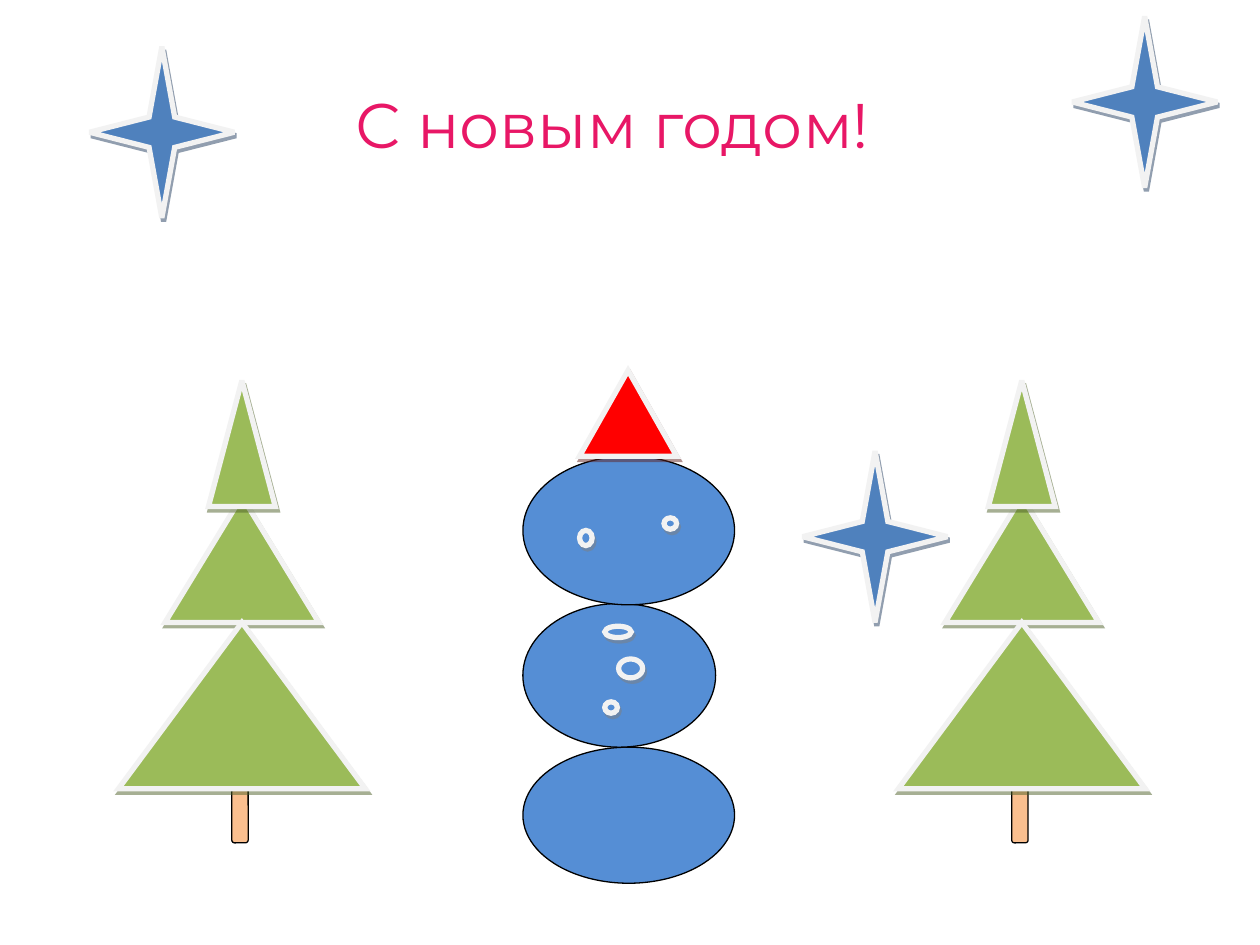
import pptx
import pptx.dml.color
import pptx.enum.shapes
import pptx.enum.text
import pptx.oxml.ns
import pptx.util
from lxml import etree

Inches = pptx.util.Inches
Pt = pptx.util.Pt
RGBColor = pptx.dml.color.RGBColor
MSO_SHAPE = pptx.enum.shapes.MSO_SHAPE
qn = pptx.oxml.ns.qn

PINK = RGBColor(0xE8, 0x17, 0x66)
BLACK = RGBColor(0x00, 0x00, 0x00)
FROST = RGBColor(0xF2, 0xF2, 0xF2)
NEEDLES = RGBColor(0x9B, 0xBB, 0x59)
NEEDLE_SHADOW = RGBColor(0x4E, 0x61, 0x28)
TRUNK = RGBColor(0xFA, 0xBF, 0x8F)
STAR = RGBColor(0x4F, 0x81, 0xBD)
STAR_SHADOW = RGBColor(0x24, 0x3F, 0x60)
SNOW = RGBColor(0x55, 0x8E, 0xD5)
BUTTON_SHADOW = RGBColor(0x7F, 0x7F, 0x7F)
HAT = RGBColor(0xFF, 0x00, 0x00)
HAT_SHADOW = RGBColor(0x62, 0x24, 0x23)


def add_figure(slide, kind, box, fill, edge=BLACK, weight=0.75):
    figure = slide.shapes.add_shape(kind, *(Inches(length) for length in box))
    figure.shadow.inherit = False
    figure.fill.solid()
    figure.fill.fore_color.rgb = fill
    figure.line.color.rgb = edge
    figure.line.width = Pt(weight)
    return figure


def add_frosted(slide, kind, box, fill, shade):
    figure = add_figure(slide, kind, box, fill, FROST, 3)
    properties = figure._element.spPr
    etree.SubElement(properties.find(qn("a:ln")), qn("a:miter"), lim="800000")
    shadow = etree.SubElement(
        properties.find(qn("a:effectLst")), qn("a:outerShdw"),
        blurRad="0", dist=str(Pt(2.2)), dir=str(63 * 60000),
        algn="ctr", rotWithShape="0")
    color = etree.SubElement(shadow, qn("a:srgbClr"), val=str(shade))
    etree.SubElement(color, qn("a:alpha"), val="50000")


def add_greeting(slide, left, top, width, height):
    title = slide.shapes.title
    title.left, title.top = Inches(left), Inches(top)
    title.width, title.height = Inches(width), Inches(height)
    frame = title.text_frame
    frame.text = "С новым годом!"
    frame.word_wrap = False
    frame.auto_size = pptx.enum.text.MSO_AUTO_SIZE.NONE
    frame.vertical_anchor = pptx.enum.text.MSO_ANCHOR.TOP
    greeting = frame.paragraphs[0]
    greeting.alignment = pptx.enum.text.PP_ALIGN.CENTER
    font = greeting.runs[0].font
    font.name = "Montserrat"
    font.size = Pt(36)
    font.color.rgb = PINK


def add_fir(slide, left, top, width):
    center = left + width / 2
    add_figure(slide, MSO_SHAPE.ROUNDED_RECTANGLE,
               (center - 0.08, top + 3.24, 0.13, 0.43), TRUNK)
    tiers = [(0.92, 1.22, 1), (0, 0.53, 1), (1.92, width, 1.32)]
    for offset, tier_width, tier_height in tiers:
        add_frosted(slide, MSO_SHAPE.ISOSCELES_TRIANGLE,
                    (center - tier_width / 2, top + offset, tier_width, tier_height),
                    NEEDLES, NEEDLE_SHADOW)


def add_star(slide, left, top):
    add_frosted(slide, MSO_SHAPE.STAR_4_POINT, (left, top, 1.15, 1.36),
                STAR, STAR_SHADOW)


def add_snowman(slide, left, top):
    snowballs = [(2.99, 1.68, 1.08), (1.85, 1.53, 1.14), (0.68, 1.68, 1.18)]
    for offset, width, height in snowballs:
        add_figure(slide, MSO_SHAPE.OVAL, (left, top + offset, width, height), SNOW)
    eyes = [(1.12, 1.17, 0.1, 0.09), (0.45, 1.27, 0.1, 0.12)]
    buttons = [(0.65, 2.03, 0.21, 0.09), (0.76, 2.29, 0.19, 0.15),
               (0.65, 2.63, 0.1, 0.09)]
    for x, y, width, height in eyes + buttons:
        add_frosted(slide, MSO_SHAPE.OVAL, (left + x, top + y, width, height),
                    SNOW, BUTTON_SHADOW)
    add_frosted(slide, MSO_SHAPE.ISOSCELES_TRIANGLE,
                (left + 0.45, top, 0.77, 0.68), HAT, HAT_SHADOW)


def main():
    deck = pptx.Presentation()
    deck.slide_width, deck.slide_height = Inches(10), Inches(7.5)
    slide = deck.slides.add_slide(deck.slide_layouts[5])
    add_greeting(slide, 2.4, 0.63, 4.92, 2.4)
    add_fir(slide, 7.13, 3.02, 1.96)
    add_star(slide, 6.37, 3.58)
    add_snowman(slide, 4.15, 2.94)
    add_fir(slide, 0.94, 3.02, 1.96)
    add_star(slide, 0.71, 0.37)
    add_star(slide, 8.51, 0.13)
    deck.save("out.pptx")


if __name__ == "__main__":
    main()
